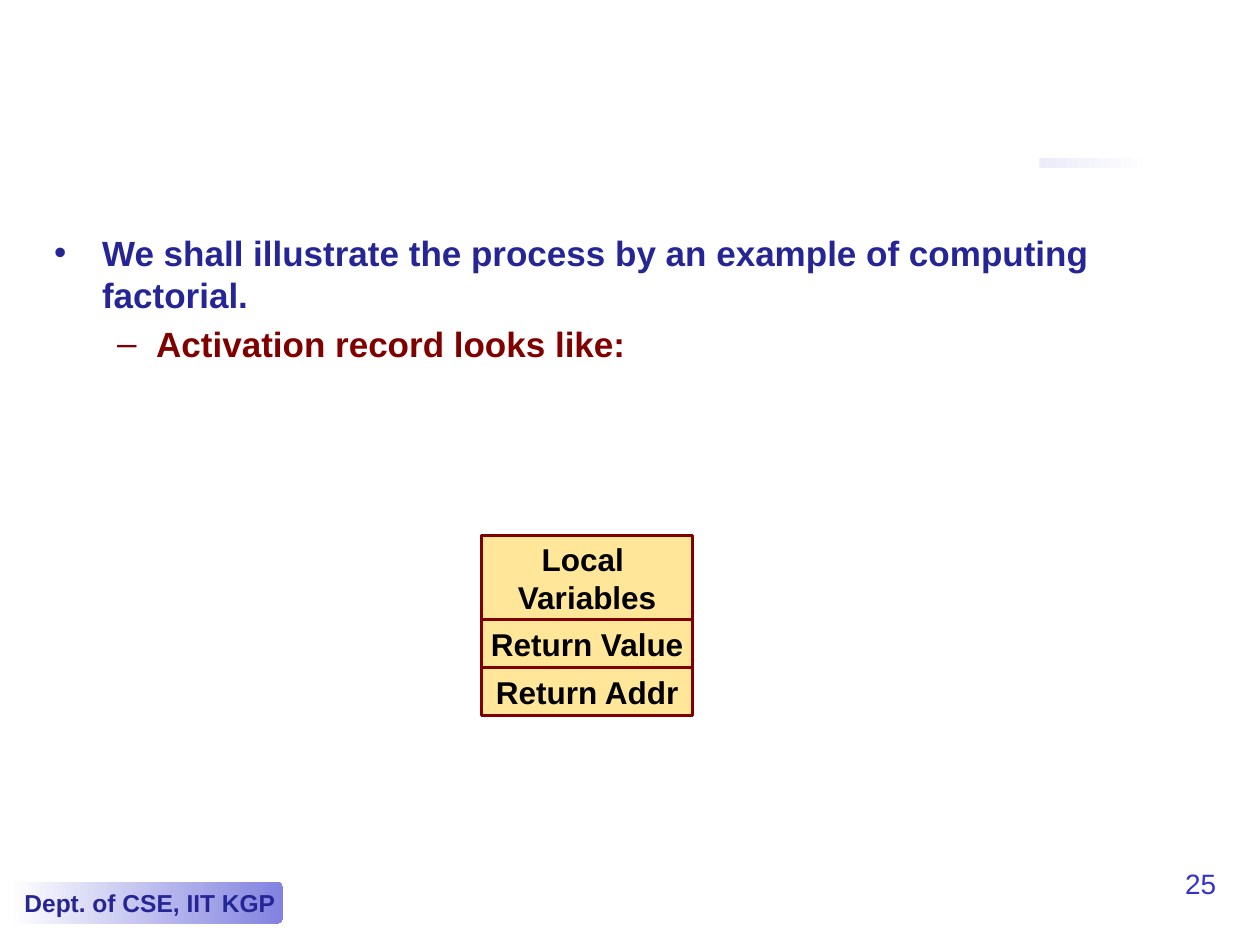
"""Build a slide showing the activation record for computing a factorial."""
import pptx
import pptx.dml.color
import pptx.enum.shapes
import pptx.enum.text
import pptx.util
from lxml import etree
from pptx.util import Inches

NAVY = pptx.dml.color.RGBColor(0x25, 0x25, 0x95)
BLUE = pptx.dml.color.RGBColor(0x33, 0x33, 0xCC)
LAVENDER = pptx.dml.color.RGBColor(0x82, 0x82, 0xE0)
MAROON = pptx.dml.color.RGBColor(0x80, 0x00, 0x00)
CREAM = pptx.dml.color.RGBColor(0xFF, 0xE6, 0x99)
BLACK = pptx.dml.color.RGBColor(0, 0, 0)
WHITE = pptx.dml.color.RGBColor(0xFF, 0xFF, 0xFF)
SHAPE = pptx.enum.shapes.MSO_SHAPE
ALIGN = pptx.enum.text.PP_ALIGN


def add_box(kind, left, top, width, height, colors):
    box = slide.shapes.add_shape(kind, Inches(left), Inches(top), Inches(width), Inches(height))
    box.shadow.inherit = False
    box.line.fill.background()
    if len(colors) == 1:
        box.fill.solid()
        box.fill.fore_color.rgb = colors[0]
    else:
        box.fill.gradient()
        box.fill.gradient_angle = 0
        for stop, color in zip(box.fill.gradient_stops, colors):
            stop.color.rgb = color
    box.text_frame.word_wrap = False
    box.text_frame.vertical_anchor = pptx.enum.text.MSO_ANCHOR.MIDDLE
    return box


def add_span(para, text, size, color, bold=True):
    span = para.add_run()
    span.text = text
    span.font.name = "Arial"
    span.font.size = pptx.util.Pt(size)
    span.font.bold = bold
    span.font.color.rgb = color


deck = pptx.Presentation()
deck.slide_width, deck.slide_height = Inches(10), Inches(7.5)
slide = deck.slides.add_slide(deck.slide_layouts[1])
title = slide.shapes.title
title.element.getparent().remove(title.element)

add_box(SHAPE.RECTANGLE, 0.33, 1.25, 8.83, 0.08, [BLUE, WHITE])
footer = add_box(SHAPE.ROUNDED_RECTANGLE, 0.08, 7, 2.17, 0.33, [WHITE, LAVENDER])
footer.text_frame.paragraphs[0].alignment = ALIGN.LEFT
add_span(footer.text_frame.paragraphs[0], "Dept. of CSE, IIT KGP", 14, NAVY)

page_number = slide.shapes.add_textbox(Inches(9.17), Inches(6.83), Inches(0.58), Inches(0.5))
page_number.text_frame.word_wrap = True
page_number.text_frame.paragraphs[0].alignment = ALIGN.RIGHT
add_span(page_number.text_frame.paragraphs[0], "25", 16, BLUE, bold=False)

body = slide.placeholders[1]
body.left, body.top, body.width, body.height = Inches(0.33), Inches(1.42), Inches(9.42), Inches(5)
frame = body.text_frame
frame.auto_size = pptx.enum.text.MSO_AUTO_SIZE.NONE
frame.margin_top = Inches(0.42)
points = [
    ("We shall illustrate the process by an example of computing factorial.", NAVY, "•", 0.38, 0.38),
    ("Activation record looks like:", MAROON, "–", 0.81, 0.31),
]
for level, (text, color, mark, margin, hanging) in enumerate(points):
    para = frame.add_paragraph() if level else frame.paragraphs[0]
    para.level = level
    para.space_before = pptx.util.Pt(4)
    add_span(para, text, 20, color)
    properties = para._p.get_or_add_pPr()
    properties.set("marL", str(Inches(margin)))
    properties.set("indent", str(-Inches(hanging)))
    bullet = etree.SubElement(properties, pptx.oxml.ns.qn("a:buChar"))
    bullet.set("char", mark)

top = 4.25
for height, lines in [(0.67, ["Local ", "Variables"]), (0.38, ["Return Value"]), (0.38, ["Return Addr"])]:
    cell = add_box(SHAPE.RECTANGLE, 3.82, top, 1.68, height, [CREAM])
    cell.line.color.rgb = MAROON
    cell.line.width = pptx.util.Pt(1.75)
    for index, line in enumerate(lines):
        para = cell.text_frame.add_paragraph() if index else cell.text_frame.paragraphs[0]
        para.alignment = ALIGN.CENTER
        add_span(para, line, 18, BLACK)
    top += height

add_box(SHAPE.RECTANGLE, 0.33, 1.17, 7.92, 0.37, [WHITE])

deck.save("out.pptx")
